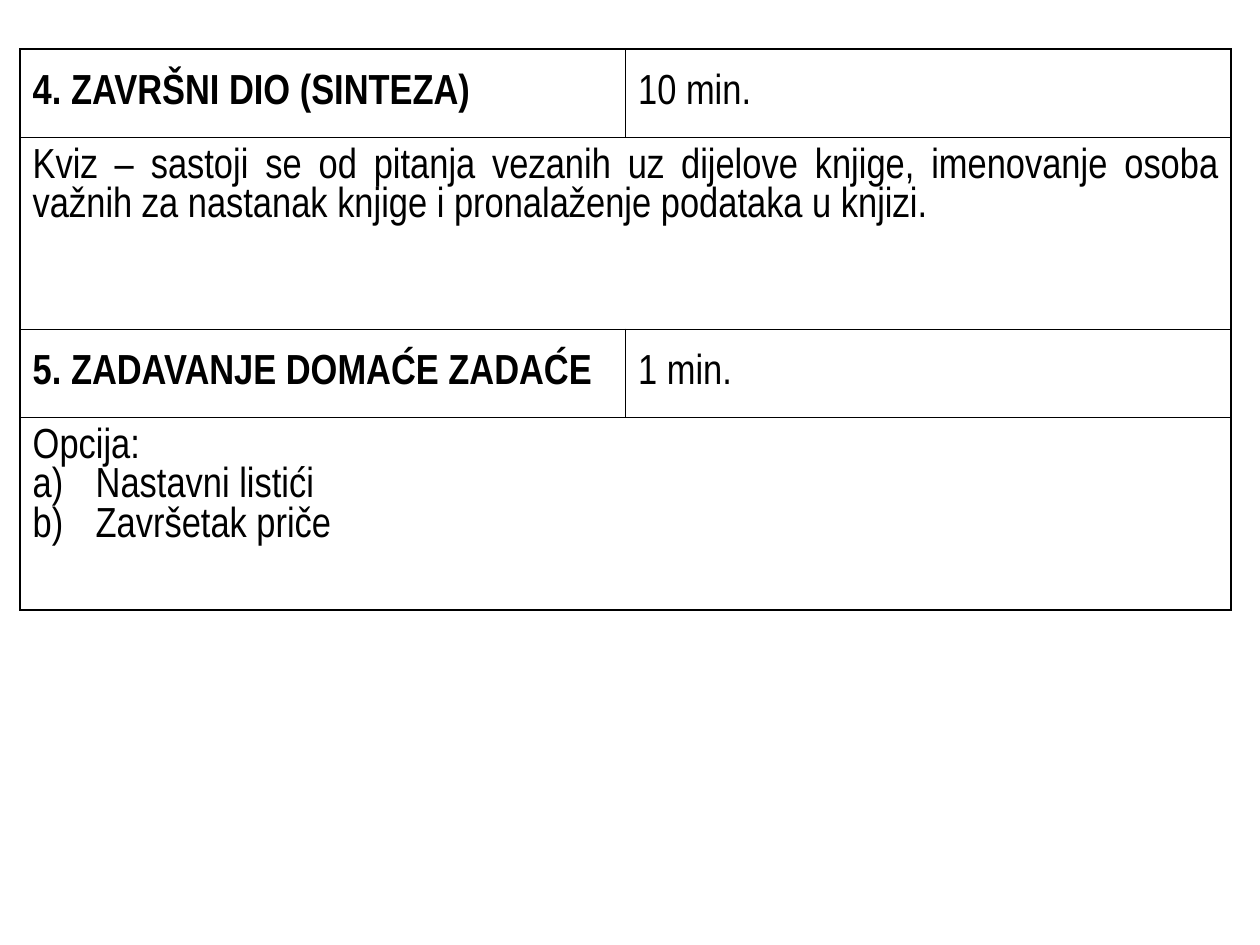
from lxml import etree
from pptx import Presentation
from pptx.dml.color import RGBColor
from pptx.enum import text
from pptx.oxml import ns
from pptx.util import Inches, Pt

FONT, SIZE, INK = "Arial Narrow", 24, "000000"
LEFT, TOP, COLUMN_WIDTH = 0.16, 0.39, 4.805
HEADING_HEIGHT, BODY_HEIGHT = 0.7, 1.525

# Each lesson part: heading, duration, body paragraphs, lettered options
LESSON_PARTS = [
    ("4. ZAVRŠNI DIO (SINTEZA)", "10 min.",
     ["Kviz – sastoji se od pitanja vezanih uz dijelove knjige, imenovanje osoba "
      "važnih za nastanak knjige i pronalaženje podataka u knjizi."], []),
    ("5. ZADAVANJE DOMAĆE ZADAĆE", "1 min.",
     ["Opcija:"], ["Nastavni listići", "Završetak priče"]),
]


def color(hex_value):
    return RGBColor.from_string(hex_value)


def add_child(parent, tag, **attributes):
    return etree.SubElement(parent, ns.qn(tag), attributes)


def draw_borders(cell):
    properties = cell._tc.get_or_add_tcPr()
    for side in ("a:lnL", "a:lnR", "a:lnT", "a:lnB"):
        line = add_child(properties, side, w=str(Pt(1)))
        add_child(add_child(line, "a:solidFill"), "a:srgbClr", val=INK)


def format_cell(cell, anchor):
    draw_borders(cell)
    cell.fill.background()
    cell.vertical_anchor = anchor
    cell.margin_left = cell.margin_right = Inches(0.1)
    cell.margin_top = cell.margin_bottom = Inches(0.08)


def write(paragraph, words, bold=False):
    run = paragraph.add_run()
    run.text = words
    run.font.name, run.font.size, run.font.bold = FONT, Pt(SIZE), bold
    run.font.color.rgb = color(INK)


def make_lettered(paragraph):
    properties = paragraph._p.get_or_add_pPr()
    properties.set("marL", str(Inches(0.5)))
    properties.set("indent", str(-Inches(0.5)))
    add_child(properties, "a:buFont", typeface=FONT)
    add_child(properties, "a:buAutoNum", type="alphaLcParenR")


def fill_body(cell, body, options):
    frame = cell.text_frame
    for index, words in enumerate(body + options):
        paragraph = frame.add_paragraph() if index else frame.paragraphs[0]
        if index >= len(body):
            make_lettered(paragraph)
        elif not options:
            paragraph.alignment = text.PP_ALIGN.JUSTIFY
        write(paragraph, words)


presentation = Presentation()
presentation.slide_width, presentation.slide_height = Inches(10), Inches(7.5)
slide = presentation.slides.add_slide(presentation.slide_layouts[6])

part_count = len(LESSON_PARTS)
lesson_plan = slide.shapes.add_table(
    2 * part_count, 2, Inches(LEFT), Inches(TOP), Inches(2 * COLUMN_WIDTH),
    Inches(part_count * (HEADING_HEIGHT + BODY_HEIGHT))).table
lesson_plan.first_row = lesson_plan.horz_banding = False
for column in lesson_plan.columns:
    column.width = Inches(COLUMN_WIDTH)

for part, (heading, duration, body, options) in enumerate(LESSON_PARTS):
    top_row, body_row = 2 * part, 2 * part + 1
    lesson_plan.rows[top_row].height = Inches(HEADING_HEIGHT)
    lesson_plan.rows[body_row].height = Inches(BODY_HEIGHT)
    lesson_plan.cell(body_row, 0).merge(lesson_plan.cell(body_row, 1))
    for column in range(2):
        format_cell(lesson_plan.cell(top_row, column), text.MSO_ANCHOR.MIDDLE)
        format_cell(lesson_plan.cell(body_row, column), text.MSO_ANCHOR.TOP)
    write(lesson_plan.cell(top_row, 0).text_frame.paragraphs[0], heading, bold=True)
    write(lesson_plan.cell(top_row, 1).text_frame.paragraphs[0], duration)
    fill_body(lesson_plan.cell(body_row, 0), body, options)

presentation.save("out.pptx")
